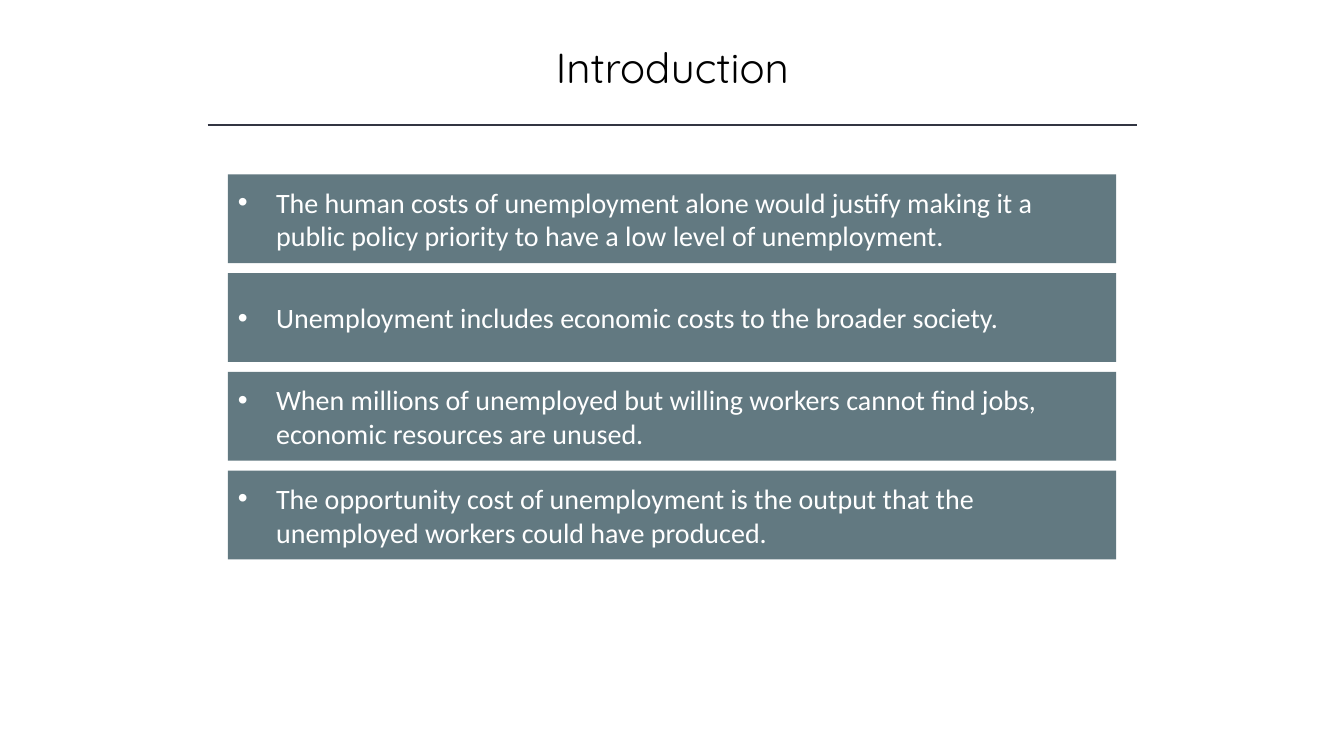
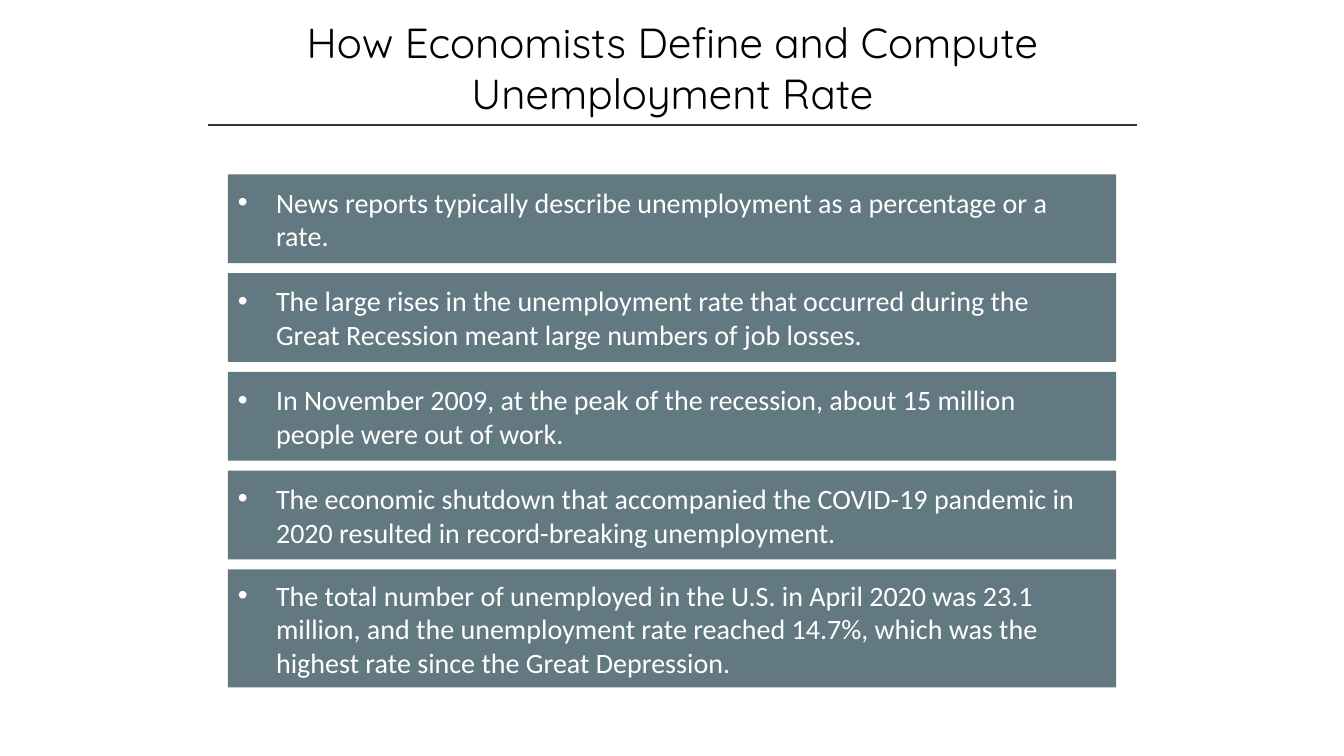
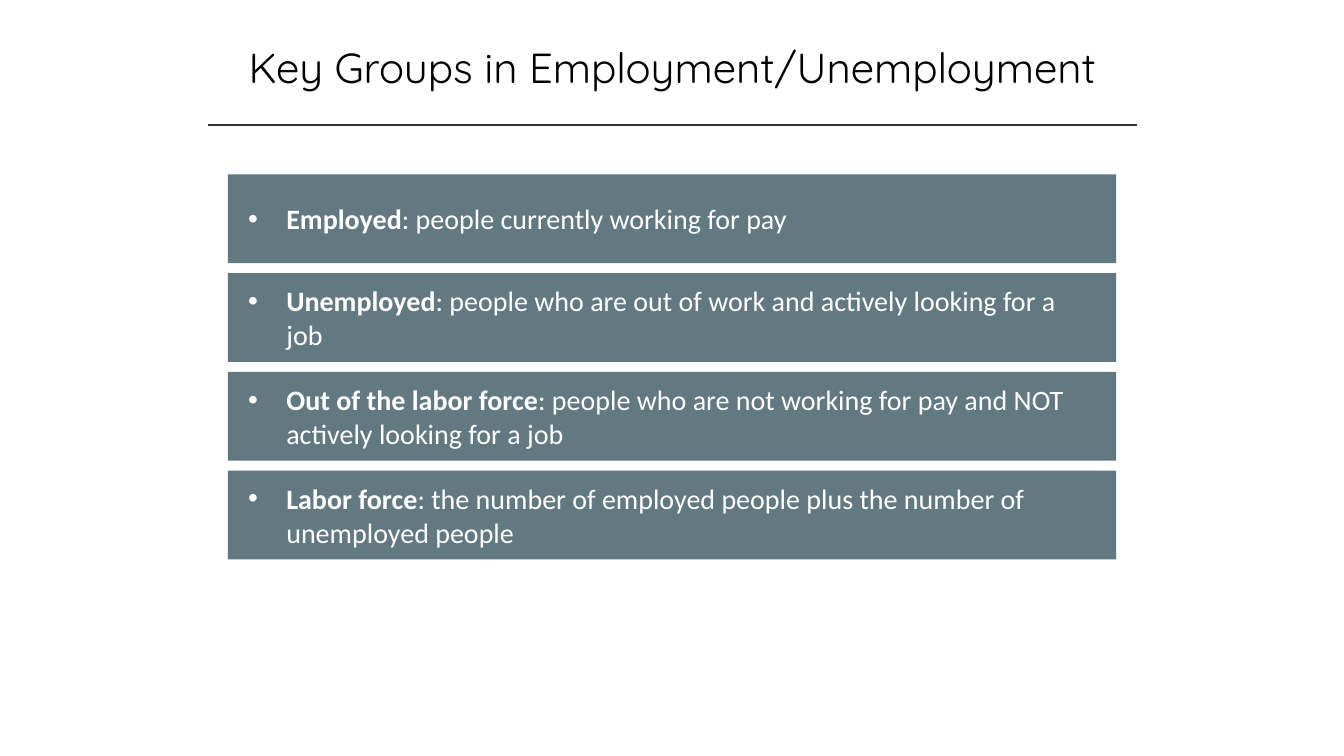
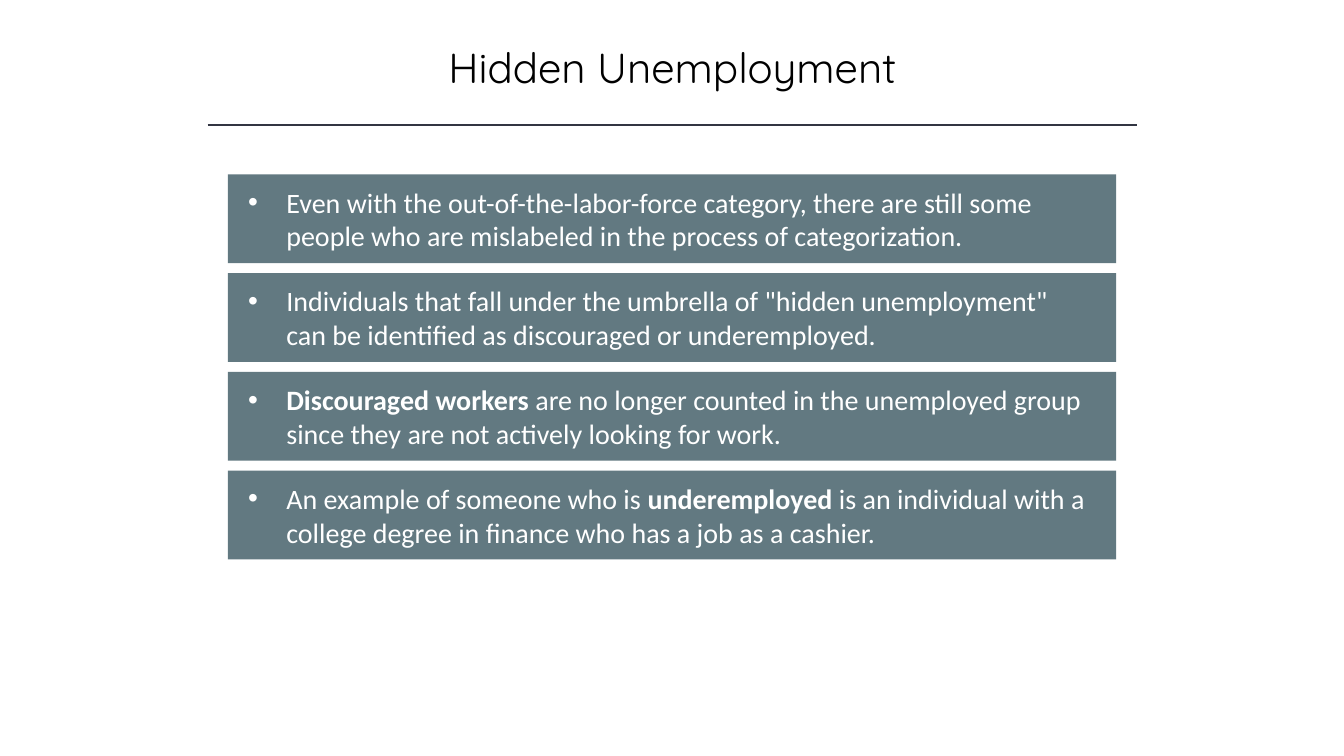
"""Build four slides on unemployment, each a ruled title over a stack of bars."""
from lxml import etree
from pptx import Presentation
from pptx.dml.color import RGBColor
from pptx.enum.shapes import MSO_CONNECTOR, MSO_SHAPE
from pptx.enum.text import MSO_ANCHOR, PP_ALIGN
from pptx.oxml.ns import qn
from pptx.util import Inches, Pt

RECT = MSO_SHAPE.RECTANGLE
LINE = MSO_CONNECTOR.STRAIGHT
MIDDLE = MSO_ANCHOR.MIDDLE
LEFT, CENTER = PP_ALIGN.LEFT, PP_ALIGN.CENTER

BLACK, WHITE, SLATE, INK = "000000", "FFFFFF", "627981", "323542"
HEAD_FONT, BODY_FONT = "Quicksand", "Calibri"
HEAD_BOX = (1.67, 0.11, 10, 1.11)
RULE = (2.06, 1.24, 9.22)
STACK = (2.26, 1.73, 8.81)
BAR, TALL, GAP = 0.88, 1.17, 0.1
INDENT, TEXT_WIDE = 0.38, 8.54

# Each slide: title, left inset of the bar text, bar texts (*bold*).
SLIDES = [
    ("Introduction", 0.1, [
        "The human costs of unemployment alone would justify making it a public policy priority to have a low level of unemployment.",
        "Unemployment includes economic costs to the broader society.",
        "When millions of unemployed but willing workers cannot find jobs, economic resources are unused.",
        "The opportunity cost of unemployment is the output that the unemployed workers could have produced.",
    ]),
    ("How Economists Define and Compute Unemployment Rate", 0.1, [
        "News reports typically describe unemployment as a percentage or a rate.",
        "The large rises in the unemployment rate that occurred during the Great Recession meant large numbers of job losses.",
        "In November 2009, at the peak of the recession, about 15 million people were out of work.",
        "The economic shutdown that accompanied the COVID-19 pandemic in 2020 resulted in record-breaking unemployment.",
        "The total number of unemployed in the U.S. in April 2020 was 23.1 million, and the unemployment rate reached 14.7%, which was the highest rate since the Great Depression.",
    ]),
    ("Key Groups in Employment/Unemployment", 0.2, [
        "*Employed*: people currently working for pay",
        "*Unemployed*: people who are out of work and actively looking for a job",
        "*Out of the labor force*: people who are not working for pay and NOT actively looking for a job",
        "*Labor force*: the number of employed people plus the number of unemployed people",
    ]),
    ("Hidden Unemployment", 0.2, [
        "Even with the out-of-the-labor-force category, there are still some people who are mislabeled in the process of categorization.",
        'Individuals that fall under the umbrella of "hidden unemployment" can be identified as discouraged or underemployed.',
        "*Discouraged workers *are no longer counted in the unemployed group since they are not actively looking for work.",
        "An example of someone who is *underemployed* is an individual with a college degree in finance who has a job as a cashier.",
    ]),
]


def color(code):
    """Turn a hex string into a colour."""
    return RGBColor.from_string(code)


def style(run, font, size, code, bold=False):
    """Set the font of one run."""
    run.font.name = font
    run.font.size = Pt(size)
    run.font.color.rgb = color(code)
    run.font.bold = bold


def bullet(para):
    """Give a paragraph a round bullet with a hanging indent."""
    props = para._p.get_or_add_pPr()
    props.set("marL", str(Inches(INDENT)))
    props.set("indent", str(-Inches(INDENT)))
    etree.SubElement(props, qn("a:buFont")).set("typeface", "Arial")
    etree.SubElement(props, qn("a:buChar")).set("char", "•")


def header(slide, title):
    """Place the centred title and the rule below it."""
    frame = slide.shapes.add_textbox(*map(Inches, HEAD_BOX)).text_frame
    frame.word_wrap = True
    frame.vertical_anchor = MIDDLE
    frame.text = title
    para = frame.paragraphs[0]
    para.alignment = CENTER
    style(para.runs[0], HEAD_FONT, 30, BLACK)

    left, top, wide = RULE
    ends = map(Inches, (left, top, left + wide, top))
    rule = slide.shapes.add_connector(LINE, *ends)
    rule.line.color.rgb = color(INK)
    rule.line.width = Pt(1)
    etree.SubElement(rule._element.spPr, qn("a:effectLst"))


def bar(slide, box, text, inset):
    """Place one filled bar with a bulleted text."""
    shape = slide.shapes.add_shape(RECT, *map(Inches, box))
    shape.shadow.inherit = False
    shape.fill.solid()
    shape.fill.fore_color.rgb = color(SLATE)
    shape.line.fill.background()
    frame = shape.text_frame
    frame.word_wrap = True
    frame.vertical_anchor = MIDDLE
    frame.margin_left = Inches(inset)
    frame.margin_right = Inches(box[2] - TEXT_WIDE - inset + 0.2)
    para = frame.paragraphs[0]
    para.alignment = LEFT
    bullet(para)
    for spot, part in enumerate(text.split("*")):
        if part:
            run = para.add_run()
            run.text = part
            style(run, BODY_FONT, 20, WHITE, spot % 2 == 1)


def stack(slide, box, texts, inset):
    """Pile bars downward at equal gaps, taller for a long text."""
    left, top, wide = box
    for text in texts:
        high = TALL if len(text) > 150 else BAR
        bar(slide, (left, top, wide, high), text, inset)
        top += high + GAP


def main():
    """Build and save the deck."""
    deck = Presentation()
    deck.slide_width, deck.slide_height = Inches(13.33), Inches(7.5)
    for title, inset, texts in SLIDES:
        slide = deck.slides.add_slide(deck.slide_layouts[6])
        header(slide, title)
        stack(slide, STACK, texts, inset)
    deck.save("out.pptx")


if __name__ == "__main__":
    main()
